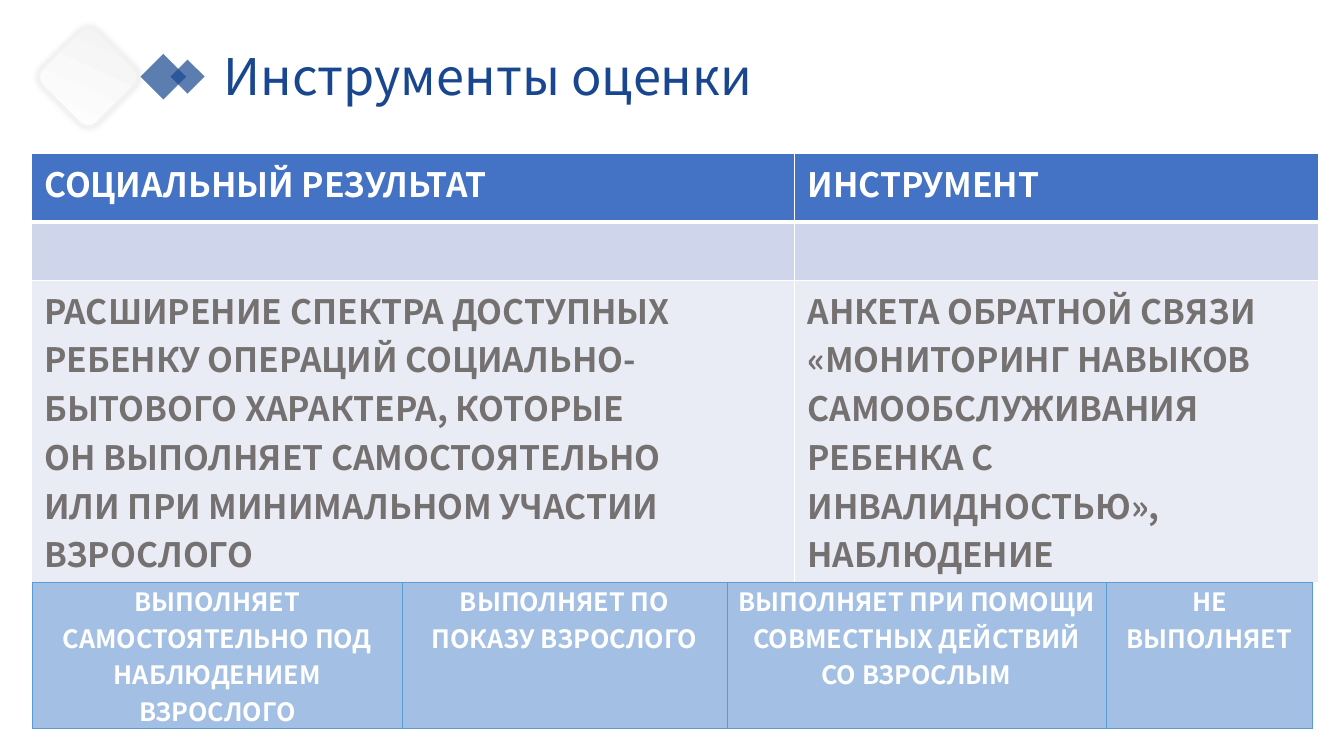
from dataclasses import dataclass

import pptx
import pptx.dml.color
import pptx.enum.shapes
import pptx.enum.text
import pptx.oxml
import pptx.oxml.ns
import pptx.util
from pptx.util import Inches

SHAPE = pptx.enum.shapes.MSO_SHAPE
ALIGN = pptx.enum.text.PP_ALIGN
ANCHOR = pptx.enum.text.MSO_ANCHOR


@dataclass(frozen=True)
class Theme:
    """Colours and type sizes of the slide."""
    font: str = "Noto Sans CJK SC"
    navy: str = "18478F"
    white: str = "FFFFFF"
    pale: str = "F2F2F2"
    black: str = "000000"
    grey: str = "767171"
    header: str = "4472C4"
    band_dark: str = "CFD5EA"
    band_light: str = "E9EBF5"
    level: str = "A3C0E4"
    level_border: str = "5B9BD5"
    title_size: int = 36
    result_size: int = 24
    level_size: int = 18


THEME = Theme()


def rgb(value):
    """Return a colour object for a hex value."""
    return pptx.dml.color.RGBColor.from_string(value)


def add_xml(parent, tag, **attributes):
    """Append a drawing element to parent and return it."""
    child = pptx.oxml.parse_xml(f'<a:{tag} {pptx.oxml.ns.nsdecls("a")}/>')
    for name, value in attributes.items():
        child.set(name, str(value))
    parent.append(child)
    return child


def apply(target, values):
    """Set attributes of target from a dict."""
    for name, value in values.items():
        setattr(target, name, value)


def write(tf, text, size, color, bold=False, align=ALIGN.LEFT, spacing=1.0):
    """Fill a text frame, one paragraph for each line of text."""
    for i, line in enumerate(text.split("\n")):
        p = tf.paragraphs[0] if i == 0 else tf.add_paragraph()
        apply(p, {"alignment": align, "line_spacing": spacing})
        r = p.add_run()
        r.text = line
        apply(r.font, {"name": THEME.font, "size": pptx.util.Pt(size), "bold": bold})
        r.font.color.rgb = rgb(color)


def add_border(cell, side, color, width):
    """Draw one side of a table cell."""
    ln = add_xml(cell._tc.get_or_add_tcPr(), f"ln{side}", w=pptx.util.Pt(width))
    add_xml(add_xml(ln, "solidFill"), "srgbClr", val=color)


def add_table(s, left, top, widths, heights):
    """Add a plain table with the given column widths and row heights."""
    size = [Inches(sum(widths)), Inches(sum(heights))]
    table = s.shapes.add_table(len(heights), len(widths), Inches(left), Inches(top), *size).table
    apply(table, {"first_row": False, "horz_banding": False})
    for column, width in zip(table.columns, widths):
        column.width = Inches(width)
    for row, height in zip(table.rows, heights):
        row.height = Inches(height)
    return table


def format_cell(cell, fill, border, widths, margin_x, margin_y):
    """Set the borders (left, right, top, bottom), fill and margins of a cell."""
    for side, width in zip("LRTB", widths):
        add_border(cell, side, border, width)
    cell.fill.solid()
    cell.fill.fore_color.rgb = rgb(fill)
    apply(cell, {"margin_left": Inches(margin_x), "margin_right": Inches(margin_x),
                 "margin_top": Inches(margin_y), "margin_bottom": Inches(margin_y)})


def add_results(s):
    """Add the table of social results and instruments."""
    rows = [
        (THEME.header, THEME.white, (1, 1, 1, 3), ["СОЦИАЛЬНЫЙ РЕЗУЛЬТАТ", "ИНСТРУМЕНТ"]),
        (THEME.band_dark, THEME.grey, (1, 1, 3, 1), ["", ""]),
        (THEME.band_light, THEME.grey, (1, 1, 1, 1), [
            "РАСШИРЕНИЕ СПЕКТРА ДОСТУПНЫХ РЕБЕНКУ ОПЕРАЦИЙ СОЦИАЛЬНО-БЫТОВОГО ХАРАКТЕРА, КОТОРЫЕ\n"
            "ОН ВЫПОЛНЯЕТ САМОСТОЯТЕЛЬНО\nИЛИ ПРИ МИНИМАЛЬНОМ УЧАСТИИ ВЗРОСЛОГО",
            "АНКЕТА ОБРАТНОЙ СВЯЗИ «МОНИТОРИНГ НАВЫКОВ САМООБСЛУЖИВАНИЯ РЕБЕНКА "
            "С ИНВАЛИДНОСТЬЮ»,\nНАБЛЮДЕНИЕ"]),
    ]
    table = add_table(s, 0.31, 1.52, [7.57, 5.2], [0.68, 0.58, 2.99])
    for i, (fill, color, widths, texts) in enumerate(rows):
        for j, text in enumerate(texts):
            cell = table.cell(i, j)
            format_cell(cell, fill, THEME.white, widths, 0.13, 0.05)
            if text:
                write(cell.text_frame, text, THEME.result_size, color, bold=True)


def add_levels(s):
    """Add the one-row scale of performance levels."""
    levels = ["ВЫПОЛНЯЕТ САМОСТОЯТЕЛЬНО ПОД НАБЛЮДЕНИЕМ ВЗРОСЛОГО",
              "ВЫПОЛНЯЕТ ПО ПОКАЗУ ВЗРОСЛОГО",
              "ВЫПОЛНЯЕТ ПРИ ПОМОЩИ СОВМЕСТНЫХ ДЕЙСТВИЙ СО ВЗРОСЛЫМ",
              "НЕ ВЫПОЛНЯЕТ"]
    table = add_table(s, 0.32, 5.78, [3.67, 3.22, 3.76, 2.05], [1.45])
    for j, text in enumerate(levels):
        cell = table.cell(0, j)
        format_cell(cell, THEME.level, THEME.level_border, (0.5,) * 4, 0.09, 0)
        write(cell.text_frame, text, THEME.level_size, THEME.white, bold=True, align=ALIGN.CENTER)


def add_square(s, kind, left, top, side, rotation):
    """Add a turned square without a shadow."""
    sp = s.shapes.add_shape(kind, Inches(left), Inches(top), Inches(side), Inches(side))
    sp.rotation = rotation
    sp.shadow.inherit = False
    return sp


def add_diamond(s, left, top, side):
    """Add a translucent navy diamond."""
    sp = add_square(s, SHAPE.RECTANGLE, left, top, side, 225)
    sp.fill.solid()
    sp.fill.fore_color.rgb = rgb(THEME.navy)
    color = sp._element.spPr.find(".//" + pptx.oxml.ns.qn("a:srgbClr"))
    add_xml(color, "alpha", val=70000)
    sp.line.fill.background()


def add_badge(s):
    """Add the pale rounded diamond with a soft shadow."""
    sp = add_square(s, SHAPE.ROUNDED_RECTANGLE, 0.49, 0.38, 0.77, 45)
    sp.fill.gradient()
    sp.fill.gradient_angle = 110
    for stop, position, color in zip(sp.fill.gradient_stops, (0, 1), (THEME.white, THEME.pale)):
        stop.position = position
        stop.color.rgb = rgb(color)
    sp.line.color.rgb = rgb(THEME.pale)
    sp.line.width = pptx.util.Pt(2)
    effects = sp._element.spPr.find(pptx.oxml.ns.qn("a:effectLst"))
    shadow = add_xml(effects, "outerShdw", blurRad=pptx.util.Pt(5), dist=0, dir=0)
    add_xml(add_xml(shadow, "srgbClr", val=THEME.black), "alpha", val=11000)


def add_title(s, text):
    """Place and format the slide title."""
    sp = s.shapes.title
    apply(sp, {"left": Inches(2.12), "top": Inches(0.43),
               "width": Inches(9.55), "height": Inches(0.71)})
    apply(sp.text_frame, {"word_wrap": True, "vertical_anchor": ANCHOR.MIDDLE,
                          "auto_size": pptx.enum.text.MSO_AUTO_SIZE.NONE})
    write(sp.text_frame, text, THEME.title_size, THEME.navy, spacing=0.9)


def main():
    """Build the slide and save it."""
    prs = pptx.Presentation()
    apply(prs, {"slide_width": Inches(13.33), "slide_height": Inches(7.5)})
    s = prs.slides.add_slide(prs.slide_layouts[5])
    add_results(s)
    add_levels(s)
    add_diamond(s, 1.46, 0.6, 0.32)
    add_diamond(s, 1.74, 0.64, 0.24)
    add_badge(s)
    add_title(s, "Инструменты оценки")
    prs.save("out.pptx")


if __name__ == "__main__":
    main()
